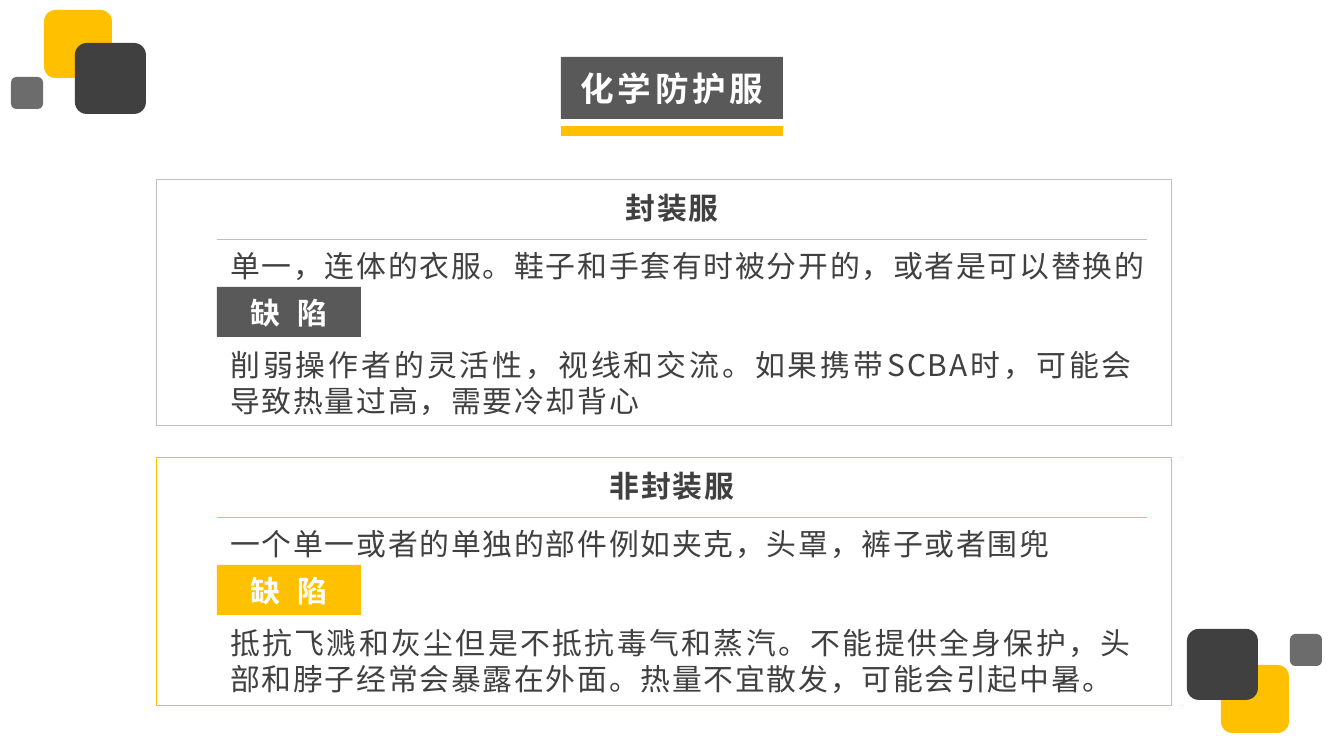
import lxml.etree
import pptx
import pptx.dml.color
import pptx.enum.shapes
import pptx.enum.text
import pptx.oxml.ns
import pptx.util

EMU_PER_PX = 9144000 / 1344
SLIDE_WIDTH, SLIDE_HEIGHT = 1344, 756
FONT = "Noto Sans CJK SC"
COLORS = {
    "yellow": "FFC000",
    "dark": "404040",
    "gray": "595959",
    "border": "BFBFBF",
    "white": "FFFFFF",
}
SHAPES = pptx.enum.shapes.MSO_SHAPE
ALIGN = pptx.enum.text.PP_ALIGN
ANCHOR = pptx.enum.text.MSO_ANCHOR


def px(length):
    return pptx.util.Emu(round(length * EMU_PER_PX))


def rgb(name):
    return pptx.dml.color.RGBColor.from_string(COLORS[name])


def add_element(parent, tag, **attributes):
    lxml.etree.SubElement(parent, pptx.oxml.ns.qn(tag), **attributes)


def write_text(shape, text, size=16, color="dark", bold=False, spacing=1,
               align=ALIGN.CENTER, anchor=ANCHOR.TOP, line_height=None,
               top_inset=7, wrap=True):
    frame = shape.text_frame
    frame.word_wrap = wrap
    frame.vertical_anchor = anchor
    frame.margin_top = px(top_inset)
    paragraph = frame.paragraphs[0]
    paragraph.alignment = align
    if line_height:
        paragraph.line_spacing = pptx.util.Pt(line_height)
    run = paragraph.add_run()
    run.text = text
    run.font.name = FONT
    run.font.size = pptx.util.Pt(size)
    run.font.bold = bold
    run.font.color.rgb = rgb(color)
    properties = run.font._element
    properties.set("spc", str(spacing * 100))
    add_element(properties, "a:ea", typeface=FONT)


def add_box(slide, left, top, width, height, kind=SHAPES.RECTANGLE,
            fill=None, line=None, alpha=None):
    shape = slide.shapes.add_shape(kind, px(left), px(top), px(width), px(height))
    shape.shadow.inherit = False
    if fill:
        shape.fill.solid()
        shape.fill.fore_color.rgb = rgb(fill)
    else:
        shape.fill.background()
    if line:
        shape.line.color.rgb = rgb(line)
        shape.line.width = pptx.util.Pt(0.25)
    else:
        shape.line.fill.background()
    if alpha:
        color = shape._element.spPr.find(".//" + pptx.oxml.ns.qn("a:srgbClr"))
        add_element(color, "a:alpha", val=str(alpha * 1000))
    return shape


def add_label(slide, text, left, top, width, height, **text_format):
    shape = slide.shapes.add_textbox(px(left), px(top), px(width), px(height))
    write_text(shape, text, line_height=19.2, top_inset=10, **text_format)


def add_rule(slide, left, right, y, color, weight):
    connector = slide.shapes.add_connector(
        pptx.enum.shapes.MSO_CONNECTOR.STRAIGHT, px(left), px(y), px(right), px(y))
    connector.line.color.rgb = rgb(color)
    connector.line.width = pptx.util.Pt(weight)
    add_element(connector._element.spPr, "a:effectLst")


def add_corner_squares(slide):
    squares = [(44, 10, 68, "yellow", None),
               (75, 43, 71, "dark", None),
               (11, 77, 32, "dark", 77)]
    # The lower right cluster is the upper left one turned by half a circle
    for turned in (False, True):
        for left, top, side, color, alpha in squares:
            if turned:
                left = SLIDE_WIDTH - 11 - left - side
                top = SLIDE_HEIGHT - 13 - top - side
            add_box(slide, left, top, side, side, SHAPES.ROUNDED_RECTANGLE,
                    fill=color, alpha=alpha)


def add_title(slide, text):
    banner = add_box(slide, 561, 57, 222, 62, fill="gray")
    write_text(banner, text, size=18, color="white", bold=True, spacing=2,
               anchor=ANCHOR.MIDDLE)
    add_rule(slide, 561, 783, 131, "yellow", 5)


def add_panel(slide, top, height, heading, summary, summary_width, defect,
              border, accent):
    left = 217
    # Heading and summary
    add_label(slide, heading, 560, top + 1, 224, 50, bold=True)
    add_label(slide, summary, left, top + 59, summary_width, 50, align=ALIGN.JUSTIFY)
    # Defect tag and its description
    tag = add_box(slide, left, top + 108, 144, 50, fill=accent)
    write_text(tag, "缺 陷", color="white", bold=True, spacing=3,
               anchor=ANCHOR.MIDDLE, wrap=False)
    add_label(slide, defect, left, top + 158, 930, 86, align=ALIGN.JUSTIFY)
    # Separator and frame
    add_rule(slide, left, 1147, top + 60, border, 0.25)
    add_box(slide, 156, top, 1015, height, line=border)


def main():
    presentation = pptx.Presentation()
    presentation.slide_width = px(SLIDE_WIDTH)
    presentation.slide_height = px(SLIDE_HEIGHT)
    slide = presentation.slides.add_slide(presentation.slide_layouts[6])

    add_corner_squares(slide)
    add_title(slide, "化学防护服")
    add_panel(slide, 179, 246, "封装服",
              "单一，连体的衣服。鞋子和手套有时被分开的，或者是可以替换的", 954,
              "削弱操作者的灵活性，视线和交流。如果携带SCBA时，可能会导致热量过高，需要冷却背心",
              border="border", accent="gray")
    add_panel(slide, 457, 248, "非封装服",
              "一个单一或者的单独的部件例如夹克，头罩，裤子或者围兜", 930,
              "抵抗飞溅和灰尘但是不抵抗毒气和蒸汽。不能提供全身保护，头部和脖子经常会暴露在外面。热量不宜散发，可能会引起中暑。",
              border="yellow", accent="yellow")
    presentation.save("out.pptx")


if __name__ == "__main__":
    main()
